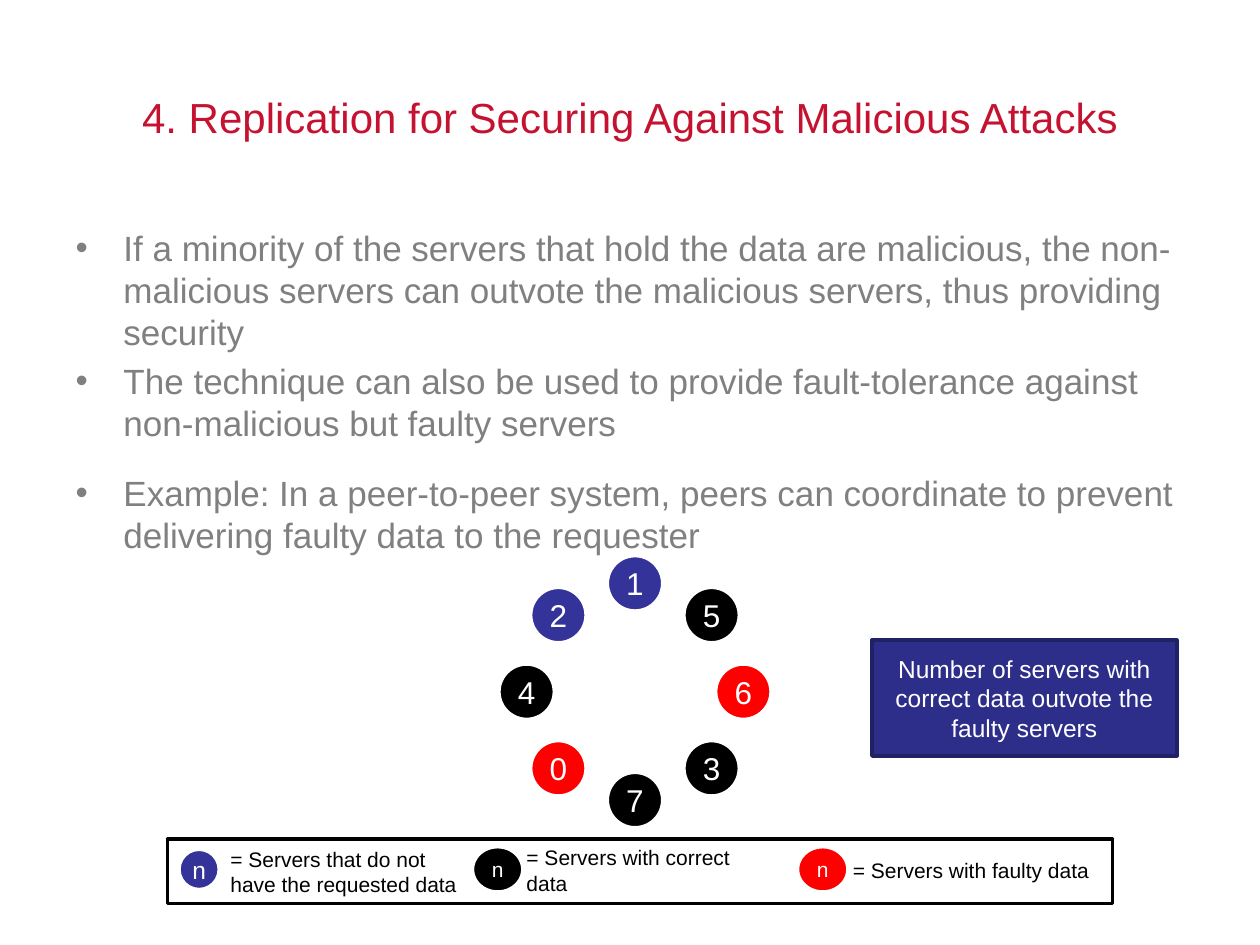
import math
from pptx import Presentation
from pptx import util as u
from pptx.dml.color import RGBColor
from pptx.enum import shapes, text
from pptx.oxml.ns import qn
from lxml import etree

RED = RGBColor(0xC4, 0x12, 0x30)
GREY = RGBColor(0x80, 0x80, 0x80)
WHITE = RGBColor(0xFF, 0xFF, 0xFF)
BLACK = RGBColor(0, 0, 0)
BLUE = RGBColor(0x33, 0x33, 0x99)
FAULT = RGBColor(0xFF, 0, 0)
NAVY = RGBColor(0x2D, 0x2D, 0x8A)
EDGE = RGBColor(0x21, 0x21, 0x66)

FONT = "Arial"
MID = text.MSO_ANCHOR.MIDDLE
LEFT, CENTER = text.PP_ALIGN.LEFT, text.PP_ALIGN.CENTER
OVAL, RECT = shapes.MSO_SHAPE.OVAL, shapes.MSO_SHAPE.RECTANGLE


def put(shape, box):
    shape.left, shape.top, shape.width, shape.height = map(u.Inches, box)


def add_run(para, words, size, color):
    run = para.add_run()
    run.text = words
    run.font.name, run.font.size = FONT, u.Pt(size)
    run.font.color.rgb = color


def write(frame, lines, size, color, align):
    frame.vertical_anchor = MID
    for i, line in enumerate(lines):
        para = frame.add_paragraph() if i else frame.paragraphs[0]
        para.alignment = align
        add_run(para, line, size, color)


def draw(slide, kind, box, fill, line):
    shape = slide.shapes.add_shape(kind, *map(u.Inches, box))
    shape.shadow.inherit = False
    shape.fill.solid()
    shape.fill.fore_color.rgb = fill
    shape.line.color.rgb = line
    shape.line.width = u.Pt(2)
    return shape


def node(slide, mid_x, mid_y, wide, high, label, size, fill):
    box = (mid_x - wide / 2, mid_y - high / 2, wide, high)
    frame = draw(slide, OVAL, box, fill, WHITE).text_frame
    frame.margin_left = frame.margin_right = 0
    frame.margin_top = frame.margin_bottom = 0
    frame.word_wrap = False
    write(frame, [label], size, WHITE, CENTER)


def heading(slide, box):
    title = slide.shapes.title
    put(title, box)
    title.text_frame.auto_size = text.MSO_AUTO_SIZE.NONE
    write(title.text_frame,
          ["4. Replication for Securing Against Malicious Attacks"],
          24, RED, CENTER)


def points(slide, box):
    body = slide.placeholders[1]
    put(body, box)
    frame = body.text_frame
    frame.auto_size = text.MSO_AUTO_SIZE.NONE
    items = [
        ("If a minority of the servers that hold the data are malicious, "
         "the non-malicious servers can outvote the malicious servers, "
         "thus providing security", 0),
        ("The technique can also be used to provide fault-tolerance "
         "against non-malicious but faulty servers", 4),
        ("Example: In a peer-to-peer system, peers can coordinate to "
         "prevent delivering faulty data to the requester", 15.5),
    ]
    for i, (words, gap) in enumerate(items):
        para = frame.add_paragraph() if i else frame.paragraphs[0]
        props = para._p.get_or_add_pPr()
        props.set("marL", str(u.Inches(0.38)))
        props.set("indent", str(-u.Inches(0.38)))
        etree.SubElement(props, qn("a:buChar")).set("char", "•")
        para.space_before = u.Pt(gap)
        add_run(para, words, 20, GREY)


def ring(slide, box):
    """Servers at equal angles, clockwise from the top."""
    left, top, wide, high = box
    size = 0.44
    reach = (wide - size) / 2
    peers = [("1", BLUE), ("5", BLACK), ("6", FAULT), ("3", BLACK),
             ("7", BLACK), ("0", FAULT), ("4", BLACK), ("2", BLUE)]
    for i, (label, fill) in enumerate(peers):
        turn = 2 * math.pi * i / len(peers)
        node(slide, left + wide / 2 + reach * math.sin(turn),
             top + high / 2 - reach * math.cos(turn),
             size, size, label, 18, fill)


def callout(slide, box):
    frame = draw(slide, RECT, box, NAVY, EDGE).text_frame
    frame.word_wrap = True
    write(frame,
          ["Number of servers with correct data outvote the faulty servers"],
          14, WHITE, CENTER)


def legend(slide, box):
    left, top, wide, high = box
    draw(slide, RECT, box, WHITE, BLACK)
    # Key: centre, width, height, letter size, colour, label start, label
    keys = [
        (0.25, 0.32, 0.32, 14, BLUE, 0.4,
         ["= Servers that do not", "have the requested data"]),
        (2.62, 0.4, 0.36, 12, BLACK, 2.75, ["= Servers with correct data"]),
        (5.2, 0.4, 0.36, 12, FAULT, 5.34, ["= Servers with faulty data"]),
    ]
    for mid, w, h, size, fill, start, lines in keys:
        node(slide, left + mid, top + 0.24, w, h, "n", size, fill)
        spot = (left + start, top - 0.02 / len(lines) + 0.01, 2.15, high)
        frame = slide.shapes.add_textbox(*map(u.Inches, spot)).text_frame
        frame.word_wrap = True
        write(frame, lines, 12, BLACK, LEFT)


def main():
    deck = Presentation()
    deck.slide_width, deck.slide_height = u.Inches(10), u.Inches(7.5)
    slide = deck.slides.add_slide(deck.slide_layouts[1])
    heading(slide, (0.5, 0.3, 9, 1.25))
    points(slide, (0.5, 1.75, 9, 2.17))
    ring(slide, (3.96, 4.41, 2.16, 2.16))
    callout(slide, (6.92, 5.08, 2.42, 0.92))
    legend(slide, (1.33, 6.66, 7.5, 0.51))
    deck.save("out.pptx")


if __name__ == "__main__":
    main()
